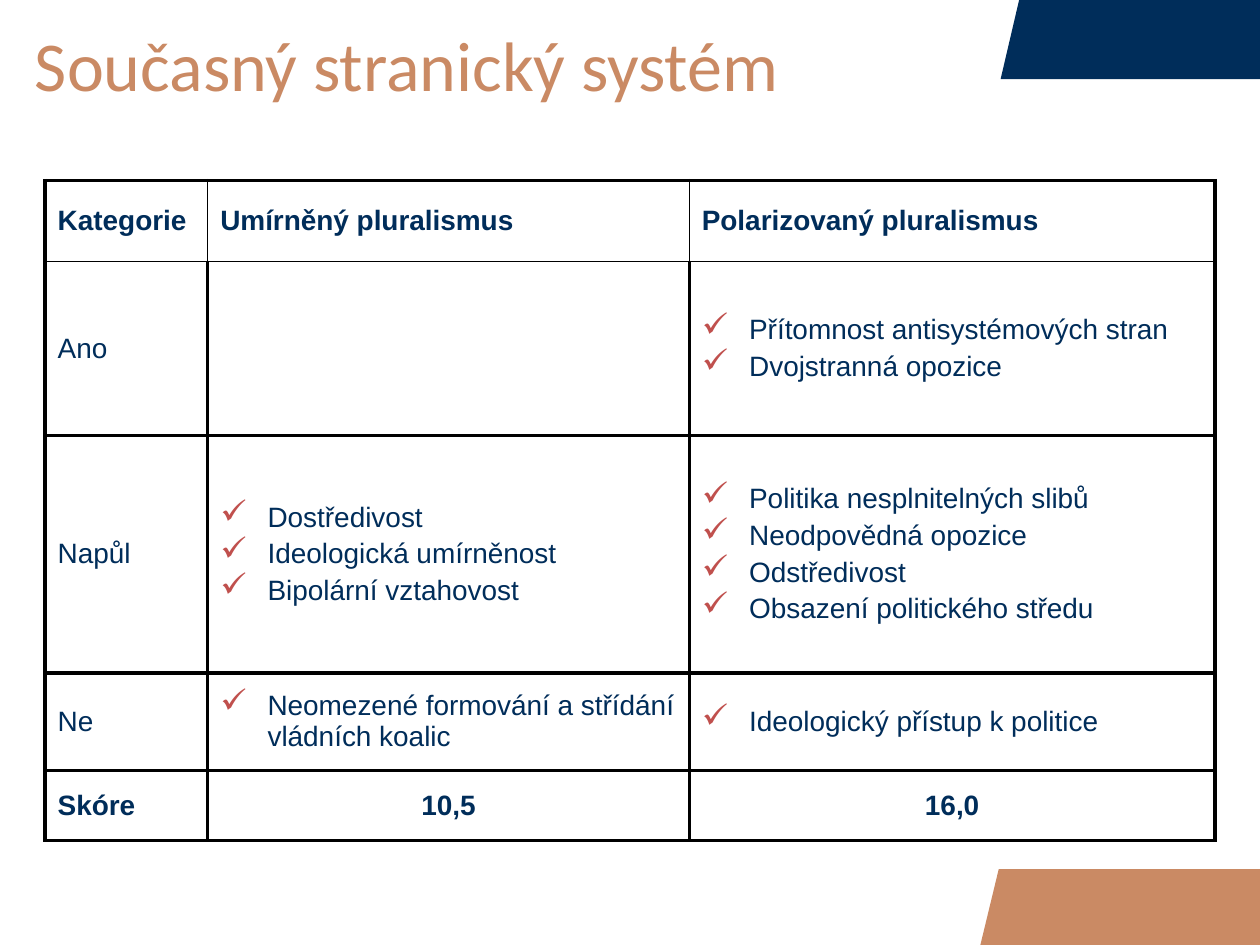
from dataclasses import dataclass

from lxml import etree
from pptx import Presentation
from pptx.dml.color import RGBColor
from pptx.enum.text import MSO_ANCHOR, PP_ALIGN
from pptx.oxml.ns import qn
from pptx.util import Pt

MIDDLE = MSO_ANCHOR.MIDDLE
LEFT, CENTER = PP_ALIGN.LEFT, PP_ALIGN.CENTER
BLANK_LAYOUT = 6


@dataclass(frozen=True)
class Theme:
    """Colours, fonts and type sizes of the deck."""
    navy: str = "002D5A"
    copper: str = "CA8A64"
    check: str = "C0504D"
    border: str = "000000"
    title_font: str = "Calibri"
    body_font: str = "Arial"
    title_size: float = 40
    body_size: float = 16
    thick: float = 2.25
    thin: float = 1


THEME = Theme()
PAGE_WIDTH, PAGE_HEIGHT = 720, 540
TABLE_LEFT, TABLE_TOP = 25.8, 103.2
COLUMN_WIDTHS = [92.9, 275.2, 300.4]
ROW_HEIGHTS = [46.3, 99.3, 135.8, 55.6, 40.3]
BULLET_INDENT = 27
PARA_GAP = 3.2

ROWS = [
    ("Kategorie", "Umírněný pluralismus", "Polarizovaný pluralismus"),
    ("Ano", [], ["Přítomnost antisystémových stran", "Dvojstranná opozice"]),
    ("Napůl",
     ["Dostředivost", "Ideologická umírněnost", "Bipolární vztahovost"],
     ["Politika nesplnitelných slibů", "Neodpovědná opozice",
      "Odstředivost", "Obsazení politického středu"]),
    ("Ne",
     ["Neomezené formování a střídání vládních koalic"],
     ["Ideologický přístup k politice"]),
    ("Skóre", "10,5", "16,0"),
]


def style_span(span, font, size, color, bold=False):
    """Format one run of text."""
    span.font.name = font
    span.font.size = Pt(size)
    span.font.bold = bold
    span.font.color.rgb = RGBColor.from_string(color)


def add_corner(page, points, color):
    """Draw a filled slanted corner from its outline points."""
    builder = page.shapes.build_freeform(Pt(points[0][0]), Pt(points[0][1]))
    builder.add_line_segments([(Pt(x), Pt(y)) for x, y in points[1:]])
    corner = builder.convert_to_shape()
    corner.shadow.inherit = False
    corner.fill.solid()
    corner.fill.fore_color.rgb = RGBColor.from_string(color)
    corner.line.fill.background()


def add_title(page, text):
    """Place the slide heading across the top."""
    box = page.shapes.add_textbox(0, 0, Pt(PAGE_WIDTH), Pt(72.7))
    frame = box.text_frame
    frame.word_wrap = True
    frame.vertical_anchor = MIDDLE
    frame.margin_left = frame.margin_right = Pt(20)
    frame.text = text
    style_span(frame.paragraphs[0].runs[0], THEME.title_font,
               THEME.title_size, THEME.copper)


def add_check(para):
    """Give a paragraph a hanging check mark."""
    props = para._p.get_or_add_pPr()
    props.set("marL", str(Pt(BULLET_INDENT)))
    props.set("indent", str(-Pt(BULLET_INDENT)))
    color = etree.SubElement(props, qn("a:buClr"))
    etree.SubElement(color, qn("a:srgbClr"), val=THEME.check)
    etree.SubElement(props, qn("a:buSzPct"), val="120000")
    etree.SubElement(props, qn("a:buChar"), char="✓")


def set_borders(cell, widths):
    """Draw the four cell borders in left, right, top, bottom order."""
    props = cell._tc.get_or_add_tcPr()
    for side, width in zip("LRTB", widths):
        line = etree.SubElement(props, qn(f"a:ln{side}"), w=str(Pt(width)))
        fill = etree.SubElement(line, qn("a:solidFill"))
        etree.SubElement(fill, qn("a:srgbClr"), val=THEME.border)


def border_widths(row, column):
    """Thin lines inside and below the header row, thick ones elsewhere."""
    thick, thin = THEME.thick, THEME.thin
    header = row == 0
    return (
        thin if header and column > 0 else thick,
        thin if header and column < len(COLUMN_WIDTHS) - 1 else thick,
        thin if row == 1 else thick,
        thin if header else thick,
    )


def fill_cell(cell, content, bold, align):
    """Write plain text or a check list into a cell."""
    cell.vertical_anchor = MIDDLE
    checked = isinstance(content, list)
    cell.text_frame.text = "\n".join(content) if checked else content
    for index, para in enumerate(cell.text_frame.paragraphs):
        if checked and content:
            add_check(para)
        para.alignment = align
        if index:
            para.space_before = Pt(PARA_GAP)
        for span in para.runs:
            style_span(span, THEME.body_font, THEME.body_size,
                       THEME.navy, bold)


def add_score_table(page):
    """Build the comparison table."""
    frame = page.shapes.add_table(
        len(ROWS), len(COLUMN_WIDTHS), Pt(TABLE_LEFT), Pt(TABLE_TOP),
        Pt(sum(COLUMN_WIDTHS)), Pt(sum(ROW_HEIGHTS)))
    table = frame.table
    table.first_row = table.horz_banding = False
    for column, width in zip(table.columns, COLUMN_WIDTHS):
        column.width = Pt(width)
    last = len(ROWS) - 1
    for r, contents in enumerate(ROWS):
        table.rows[r].height = Pt(ROW_HEIGHTS[r])
        for c, content in enumerate(contents):
            cell = table.cell(r, c)
            align = CENTER if r == last and c > 0 else LEFT
            fill_cell(cell, content, r in (0, last), align)
            set_borders(cell, border_widths(r, c))
            cell.fill.background()


def main():
    """Assemble and save the slide."""
    deck = Presentation()
    deck.slide_width, deck.slide_height = Pt(PAGE_WIDTH), Pt(PAGE_HEIGHT)
    page = deck.slides.add_slide(deck.slide_layouts[BLANK_LAYOUT])
    add_corner(page, [(571.8, 45.2), (582.4, 0), (PAGE_WIDTH, 0),
                      (PAGE_WIDTH, 45.2)], THEME.navy)
    add_corner(page, [(560.2, PAGE_HEIGHT), (570.7, 496.7),
                      (PAGE_WIDTH, 496.7), (PAGE_WIDTH, PAGE_HEIGHT)],
               THEME.copper)
    add_title(page, "Současný stranický systém")
    add_score_table(page)
    deck.save("out.pptx")


if __name__ == "__main__":
    main()
